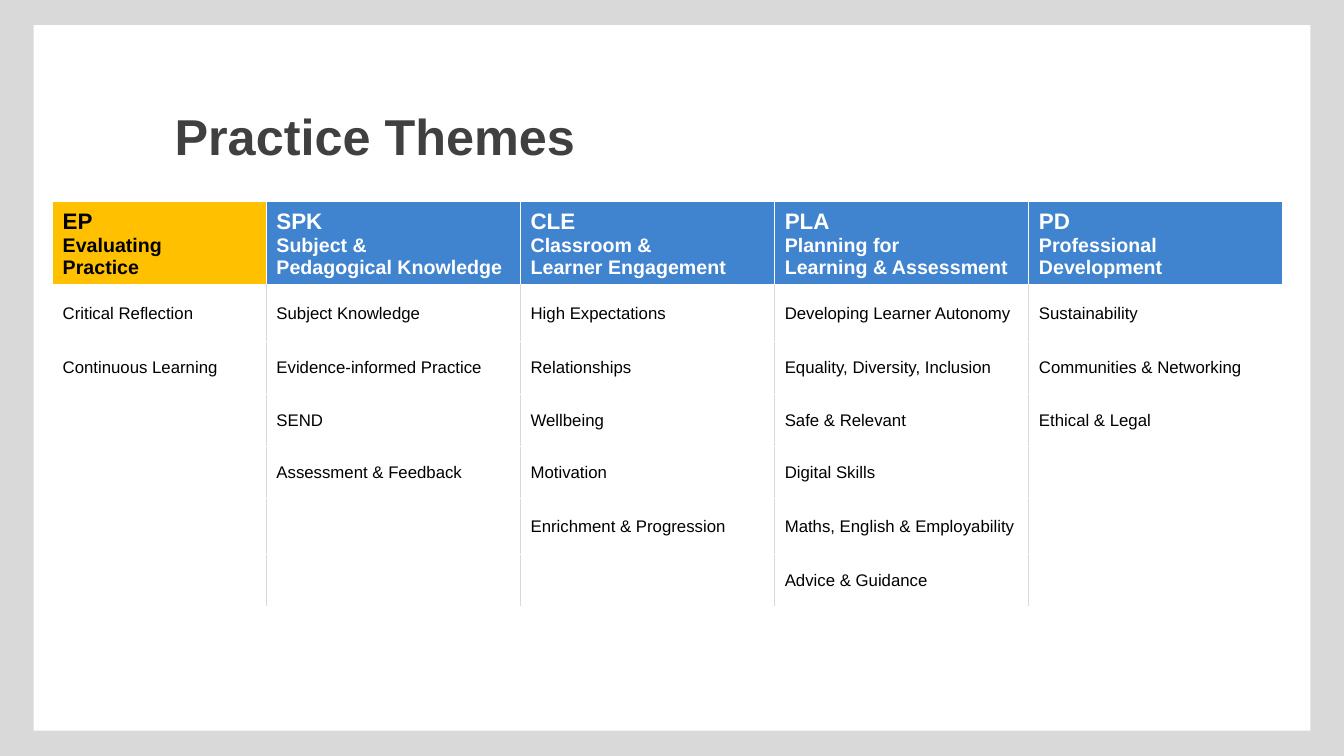
from lxml import etree
from pptx import Presentation
from pptx.dml.color import RGBColor
from pptx.enum.shapes import MSO_SHAPE
from pptx.enum.text import MSO_ANCHOR, PP_ALIGN
from pptx.oxml.ns import qn
from pptx.util import Pt

RECTANGLE = MSO_SHAPE.RECTANGLE
MIDDLE = MSO_ANCHOR.MIDDLE
LEFT = PP_ALIGN.LEFT

FONT = "Arial"
WHITE, BLACK, GREY = "FFFFFF", "000000", "D9D9D9"
GOLD, BLUE, CHARCOAL = "FFC000", "4083CF", "404040"

# Code, heading paragraphs (a newline is a line break), topics
THEMES = [
    ("EP", ["Evaluating", "Practice"],
     ["Critical Reflection", "Continuous Learning"]),
    ("SPK", ["Subject &", "Pedagogical Knowledge"],
     ["Subject Knowledge", "Evidence-informed Practice", "SEND",
      "Assessment & Feedback"]),
    ("CLE", ["Classroom & \nLearner Engagement"],
     ["High Expectations", "Relationships", "Wellbeing", "Motivation",
      "Enrichment & Progression"]),
    ("PLA", ["Planning for", "Learning & Assessment"],
     ["Developing Learner Autonomy", "Equality, Diversity, Inclusion",
      "Safe & Relevant", "Digital Skills", "Maths, English & Employability",
      "Advice & Guidance"]),
    ("PD", ["Professional Development"],
     ["Sustainability", "Communities & Networking", "Ethical & Legal"]),
]
FIRST_COLUMN_WIDTH = 152.7
ROW_HEIGHTS = [60.3, 39.9, 37.4, 37.4, 37.4, 39.9, 37.4]


def rgb(color):
    return RGBColor.from_string(color)


def write(paragraph, text, size, color, bold=False):
    """Add the text as runs, with a line break at each newline."""
    paragraph.alignment = LEFT
    for index, line in enumerate(text.split("\n")):
        if index:
            paragraph.add_line_break()
        run = paragraph.add_run()
        run.text = line
        run.font.name = FONT
        run.font.size = Pt(size)
        run.font.bold = bold
        run.font.color.rgb = rgb(color)


def set_borders(cell, left, right, bottom_width):
    """Draw coloured sides, and white edges above and below."""
    properties = cell._tc.get_or_add_tcPr()
    edges = [("a:lnL", left, 1), ("a:lnR", right, 1),
             ("a:lnT", WHITE, 1), ("a:lnB", WHITE, bottom_width)]
    for tag, color, width in edges:
        border = etree.SubElement(properties, qn(tag), w=str(Pt(width)))
        fill = etree.SubElement(border, qn("a:solidFill"))
        etree.SubElement(fill, qn("a:srgbClr"), val=color)


def add_panel(slide, left, top, width, height):
    panel = slide.shapes.add_shape(
        RECTANGLE, Pt(left), Pt(top), Pt(width), Pt(height))
    panel.shadow.inherit = False
    panel.fill.solid()
    panel.fill.fore_color.rgb = rgb(WHITE)
    panel.line.fill.background()
    slide.shapes.title.element.addprevious(panel.element)


def place_title(slide, left, top, width, height):
    title = slide.shapes.title
    title.left, title.top = Pt(left), Pt(top)
    title.width, title.height = Pt(width), Pt(height)
    title.text_frame.vertical_anchor = MIDDLE
    write(title.text_frame.paragraphs[0], "Practice Themes", 36, CHARCOAL, True)


def fill_heading(cell, code, heading, fill, color):
    set_borders(cell, WHITE, WHITE, 3)
    cell.vertical_anchor = MIDDLE
    cell.fill.solid()
    cell.fill.fore_color.rgb = rgb(fill)
    write(cell.text_frame.paragraphs[0], code, 16, color, True)
    for line in heading:
        write(cell.text_frame.add_paragraph(), line, 14, color, True)


def add_themes_table(slide, left, top, width, height):
    table = slide.shapes.add_table(
        len(ROW_HEIGHTS), len(THEMES),
        Pt(left), Pt(top), Pt(width), Pt(height)).table
    table.first_row = table.horz_banding = False
    for row, row_height in zip(table.rows, ROW_HEIGHTS):
        row.height = Pt(row_height)

    last = len(THEMES) - 1
    for index, (code, heading, topics) in enumerate(THEMES):
        is_first = index == 0
        table.columns[index].width = Pt(
            FIRST_COLUMN_WIDTH if is_first
            else (width - FIRST_COLUMN_WIDTH) / last)
        fill, color = (GOLD, BLACK) if is_first else (BLUE, WHITE)
        fill_heading(table.cell(0, index), code, heading, fill, color)

        for row in range(1, len(ROW_HEIGHTS)):
            cell = table.cell(row, index)
            set_borders(cell, WHITE if is_first else GREY,
                        WHITE if index == last else GREY, 1)
            cell.fill.background()
            cell.vertical_anchor = MIDDLE
            if row <= len(topics):
                write(cell.text_frame.paragraphs[0], topics[row - 1], 12, BLACK)


def main():
    deck = Presentation()
    deck.slide_width, deck.slide_height = Pt(960), Pt(540)
    slide = deck.slides.add_slide(deck.slide_layouts.get_by_name("Title Only"))
    slide.background.fill.solid()
    slide.background.fill.fore_color.rgb = rgb(GREY)
    add_panel(slide, 24, 18, 912, 504)
    place_title(slide, 117.5, 43.2, 725.8, 106.6)
    add_themes_table(slide, 37.6, 144, 879, sum(ROW_HEIGHTS))
    deck.save("out.pptx")


if __name__ == "__main__":
    main()
